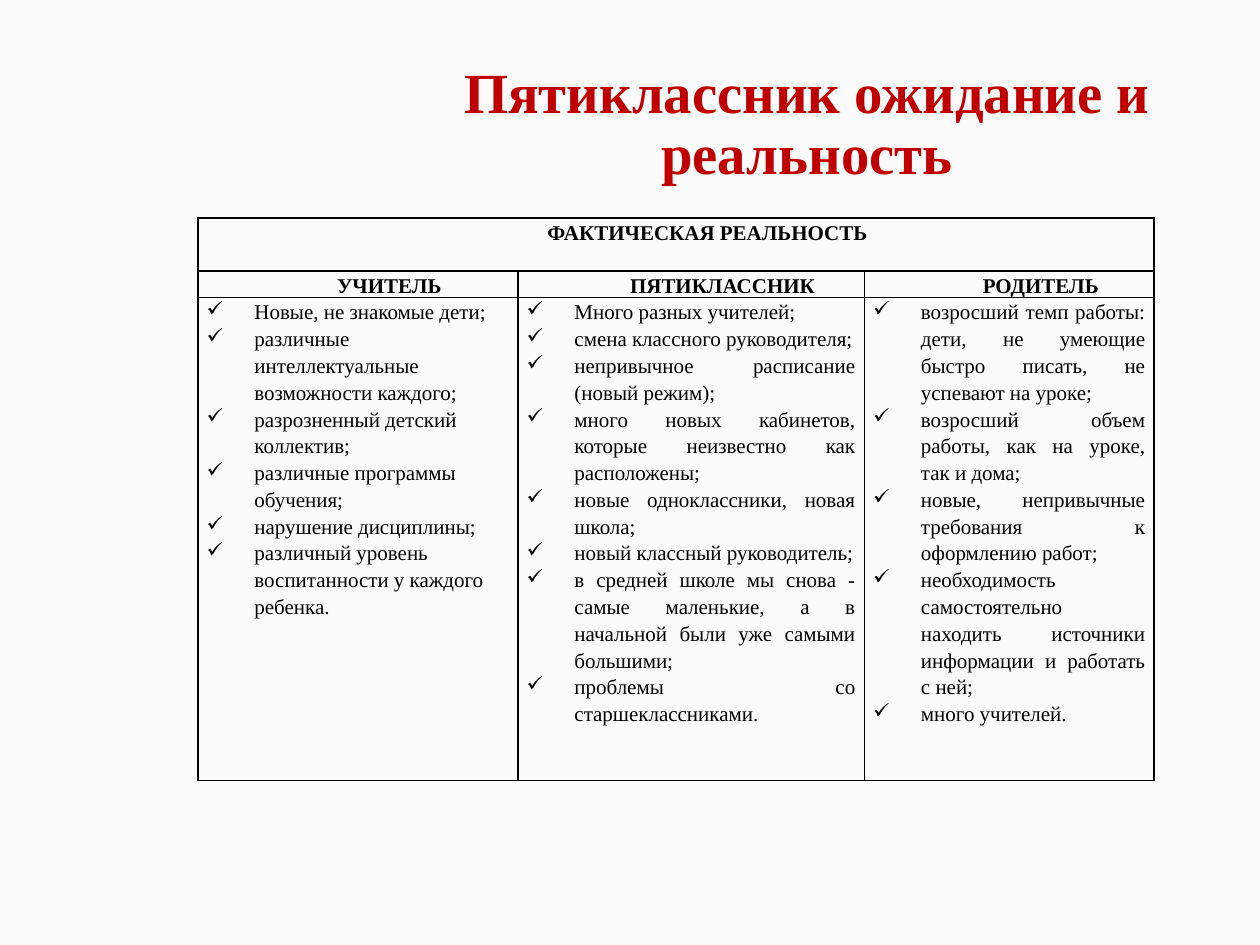
from lxml.etree import SubElement
from pptx import Presentation
from pptx.dml.color import RGBColor
from pptx.enum.text import MSO_ANCHOR, PP_ALIGN
from pptx.oxml.ns import qn
from pptx.util import Inches, Pt

PAPER = RGBColor(0xFA, 0xFA, 0xFA)
RED = RGBColor(0xC0, 0x00, 0x00)
BLACK = RGBColor(0x00, 0x00, 0x00)
FONT = "Times New Roman"

COLUMNS = [
    ("УЧИТЕЛЬ", 2.54, PP_ALIGN.LEFT, [
        "Новые, не знакомые дети;",
        "различные интеллектуальные возможности каждого;",
        "разрозненный детский коллектив;",
        "различные программы обучения;",
        "нарушение дисциплины;",
        "различный уровень воспитанности у каждого ребенка.",
    ]),
    ("ПЯТИКЛАССНИК", 2.75, PP_ALIGN.JUSTIFY, [
        "Много разных учителей;",
        "смена классного руководителя;",
        "непривычное расписание (новый режим);",
        "много новых кабинетов, которые неизвестно как расположены;",
        "новые одноклассники, новая школа;",
        "новый классный руководитель;",
        "в средней школе мы снова - самые маленькие, а в начальной были уже самыми большими;",
        "проблемы со старшеклассниками.",
    ]),
    ("РОДИТЕЛЬ", 2.3, PP_ALIGN.JUSTIFY, [
        "возросший темп работы: дети, не умеющие быстро писать, не успевают на уроке;",
        "возросший объем работы, как на уроке, так и дома;",
        "новые, непривычные требования к оформлению работ;",
        "необходимость самостоятельно находить источники информации и работать с ней;",
        "много учителей.",
    ]),
]
ROW_HEIGHTS = [0.42, 0.21, 3.83]


def style_font(font, size, color, bold):
    font.name = FONT
    font.size = Pt(size)
    font.bold = bold
    font.color.rgb = color


def place_title(slide, left, top, width, height):
    title = slide.shapes.title
    title.left, title.top = Inches(left), Inches(top)
    title.width, title.height = Inches(width), Inches(height)
    frame = title.text_frame
    frame.text = "Пятиклассник ожидание и реальность"
    frame.word_wrap = True
    frame.vertical_anchor = MSO_ANCHOR.MIDDLE
    heading = frame.paragraphs[0]
    heading.alignment = PP_ALIGN.CENTER
    heading.line_spacing = 0.9
    style_font(heading.runs[0].font, 32.4, RED, True)


def format_cell(cell):
    cell.margin_left = cell.margin_right = Inches(0.07)
    cell.margin_top = cell.margin_bottom = 0
    cell.vertical_anchor = MSO_ANCHOR.TOP
    properties = cell._tc.get_or_add_tcPr()
    for side in ("lnL", "lnR", "lnT", "lnB"):
        border = SubElement(properties, qn(f"a:{side}"), w=str(Pt(1)))
        fill = SubElement(border, qn("a:solidFill"))
        SubElement(fill, qn("a:srgbClr"), val=str(BLACK))
    cell.fill.background()


def write_cell(cell, lines, alignment, indent, bold, bullet=None):
    cell.text_frame.text = "\n".join(lines)
    for paragraph in cell.text_frame.paragraphs:
        properties = paragraph._p.get_or_add_pPr()
        properties.set("marL", str(Inches(indent)))
        properties.set("indent", str(Inches(-indent if bullet else 0)))
        if bullet:
            SubElement(properties, qn("a:buChar"), char=bullet)
        paragraph.alignment = alignment
        paragraph.line_spacing = 1.15
        style_font(paragraph.runs[0].font, 12, BLACK, bold)


def place_reality_table(slide, left, top):
    widths = [width for _, width, _, _ in COLUMNS]
    table = slide.shapes.add_table(
        len(ROW_HEIGHTS), len(COLUMNS), Inches(left), Inches(top),
        Inches(sum(widths)), Inches(sum(ROW_HEIGHTS))).table
    table.first_row = table.horz_banding = False
    for row, height in zip(table.rows, ROW_HEIGHTS):
        row.height = Inches(height)
    for column, width in zip(table.columns, widths):
        column.width = Inches(width)
    for cell in table.iter_cells():
        format_cell(cell)

    banner = table.cell(0, 0)
    banner.merge(table.cell(0, len(COLUMNS) - 1))
    write_cell(banner, ["ФАКТИЧЕСКАЯ РЕАЛЬНОСТЬ"], PP_ALIGN.CENTER, 0.5, True)
    for index, (role, _, alignment, points) in enumerate(COLUMNS):
        write_cell(table.cell(1, index), [role], PP_ALIGN.CENTER, 0.5, True)
        write_cell(table.cell(2, index), points, alignment, 0.38, False, "✓")


def main():
    presentation = Presentation()
    presentation.slide_width = Inches(10)
    presentation.slide_height = Inches(7.5)
    slide = presentation.slides.add_slide(presentation.slide_layouts[5])
    slide.background.fill.solid()
    slide.background.fill.fore_color.rgb = PAPER
    place_title(slide, 2.94, 0.56, 6.93, 0.87)
    place_reality_table(slide, 1.57, 1.73)
    presentation.save("out.pptx")


if __name__ == "__main__":
    main()
